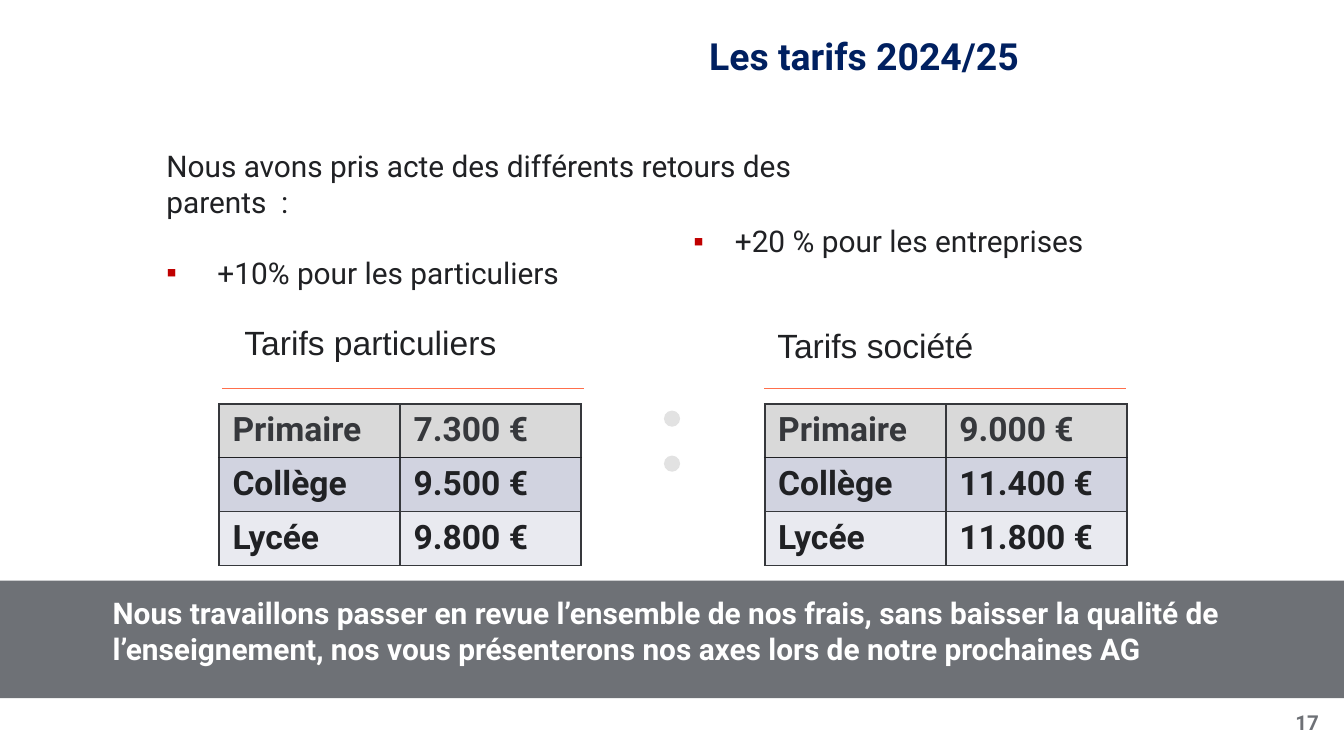
from lxml.etree import SubElement
from pptx import Presentation
from pptx.dml.color import RGBColor
from pptx.enum.shapes import MSO_CONNECTOR as CONN, MSO_SHAPE as SHAPE
from pptx.enum.text import MSO_ANCHOR as ANCHOR, MSO_AUTO_SIZE as FIT, PP_ALIGN as ALIGN
from pptx.oxml.ns import qn
from pptx.util import Inches, Pt

INK, SLATE, GREY = "202124", "36383C", "6E7176"
ROW_STYLES = [("D9D9D9", SLATE), ("D1D3E0", INK), ("E9EAF0", INK)]
LEVELS = ["Primaire", "Collège", "Lycée"]


def rgb(value):
    return RGBColor.from_string(value)


def write(tf, text, size=16, color=INK, font="Roboto", bold=False, align=None,
          bullet=None, indent=0.0, before=0, new=False):
    p = tf.add_paragraph() if new else tf.paragraphs[0]
    if bullet:
        pPr = p._p.get_or_add_pPr()
        pPr.set("marL", str(Inches(indent)))
        pPr.set("indent", str(-Inches(indent)))
        clr = SubElement(pPr, qn("a:buClr"))
        SubElement(clr, qn("a:srgbClr"), val=bullet)
        SubElement(pPr, qn("a:buFont"), typeface="Arial")
        SubElement(pPr, qn("a:buChar"), char="▪")
    if align is not None:
        p.alignment = align
    if before:
        p.space_before = Pt(before)
    r = p.add_run()
    r.text = text
    r.font.size, r.font.bold, r.font.name = Pt(size), bold, font
    r.font.color.rgb = rgb(color)


class Deck:
    def __init__(self, width, ratio):
        self.prs = Presentation()
        self.prs.slide_width = Inches(width)
        self.prs.slide_height = Inches(width / ratio)
        self.unit = self.prs.slide_width / 100
        self.s = self.prs.slides.add_slide(self.prs.slide_layouts[5])

    def grid(self, *cells):
        return [round(c * self.unit) for c in cells]

    def title(self, box, text, **style):
        sp = self.s.shapes.title
        sp.left, sp.top, sp.width, sp.height = self.grid(*box)
        tf = sp.text_frame
        tf.auto_size, tf.word_wrap, tf.vertical_anchor = FIT.NONE, True, ANCHOR.TOP
        tf.margin_left = tf.margin_top = tf.margin_right = tf.margin_bottom = Inches(0.1)
        write(tf, text, **style)

    def text(self, box, text, **style):
        tf = self.s.shapes.add_textbox(*self.grid(*box)).text_frame
        tf.word_wrap = True
        write(tf, text, **style)
        return tf

    def shape(self, kind, box, fill):
        sp = self.s.shapes.add_shape(kind, *self.grid(*box))
        sp.shadow.inherit = False
        sp.fill.solid()
        sp.fill.fore_color.rgb = rgb(fill)
        sp.line.fill.background()

    def rule(self, x, y, width, color="FF6F4C"):
        line = self.s.shapes.add_connector(CONN.STRAIGHT, *self.grid(x, y, x + width, y))
        line.line.color.rgb = rgb(color)
        line.line.width = Pt(0.75)
        SubElement(line._element.spPr, qn("a:effectLst"))

    def border(self, cell, side, color):
        ln = SubElement(cell._tc.get_or_add_tcPr(), qn(f"a:ln{side}"), w=str(Pt(1)))
        fill = SubElement(ln, qn("a:solidFill"))
        SubElement(fill, qn("a:srgbClr"), val=color)

    def table(self, box, rows):
        tbl = self.s.shapes.add_table(len(rows), 2, *self.grid(*box)).table
        tbl.first_row = tbl.horz_banding = False
        for i, (row, (fill, color)) in enumerate(zip(rows, ROW_STYLES)):
            edges = {"L": SLATE, "R": SLATE,
                     "T": INK if i == 1 else SLATE, "B": INK if i == 0 else SLATE}
            for j, value in enumerate(row):
                cell = tbl.cell(i, j)
                for side, edge in edges.items():
                    self.border(cell, side, edge)
                cell.fill.solid()
                cell.fill.fore_color.rgb = rgb(fill)
                write(cell.text_frame, value, size=18, color=color, bold=True)


def main():
    deck = Deck(10, 16 / 9)
    deck.title((32.5, 1.5, 63.6, 5.6), "Les tarifs 2024/25",
               size=20, color="002060", bold=True, align=ALIGN.CENTER)
    deck.shape(SHAPE.RECTANGLE, (0, 43.2, 100, 8.75), GREY)
    for y in (30.55, 33.9):
        deck.shape(SHAPE.OVAL, (49.4, y, 1.2, 1.2), "E2E2E2")

    intro = deck.text((11.4, 10.5, 55.3, 9.1),
                      "Nous avons pris acte des différents retours des parents  :")
    write(intro, "+10% pour les particuliers", bullet="C00000", indent=0.38,
          before=19, new=True)
    deck.text((50.6, 16.1, 36.2, 3.7), "+20 % pour les entreprises",
              bullet="C00000", indent=0.31)

    offers = [
        ("Tarifs particuliers", (17.2, 23.45), 16.5, 16.3, ["7.300 €", "9.500 €", "9.800 €"]),
        ("Tarifs société", (56.85, 23.7), 56.85, 56.9, ["9.000 €", "11.400 €", "11.800 €"]),
    ]
    for heading, corner, rule_x, table_x, prices in offers:
        deck.text((*corner, 24.1, 4), heading, size=18, font="Arial")
        deck.rule(rule_x, 28.9, 26.95)
        deck.table((table_x, 30.05, 26.95, 12), list(zip(LEVELS, prices)))

    deck.text((7.4, 43.75, 88.1, 6.4),
              "Nous travaillons passer en revue l’ensemble de nos frais, sans baisser "
              "la qualité de l’enseignement, nos vous présenterons nos axes lors de "
              "notre prochaines AG", color="FFFFFF", bold=True)
    deck.text((95.4, 52.35, 4.1, 2.9), "17", size=11, color=GREY, bold=True)
    deck.prs.save("out.pptx")


if __name__ == "__main__":
    main()
